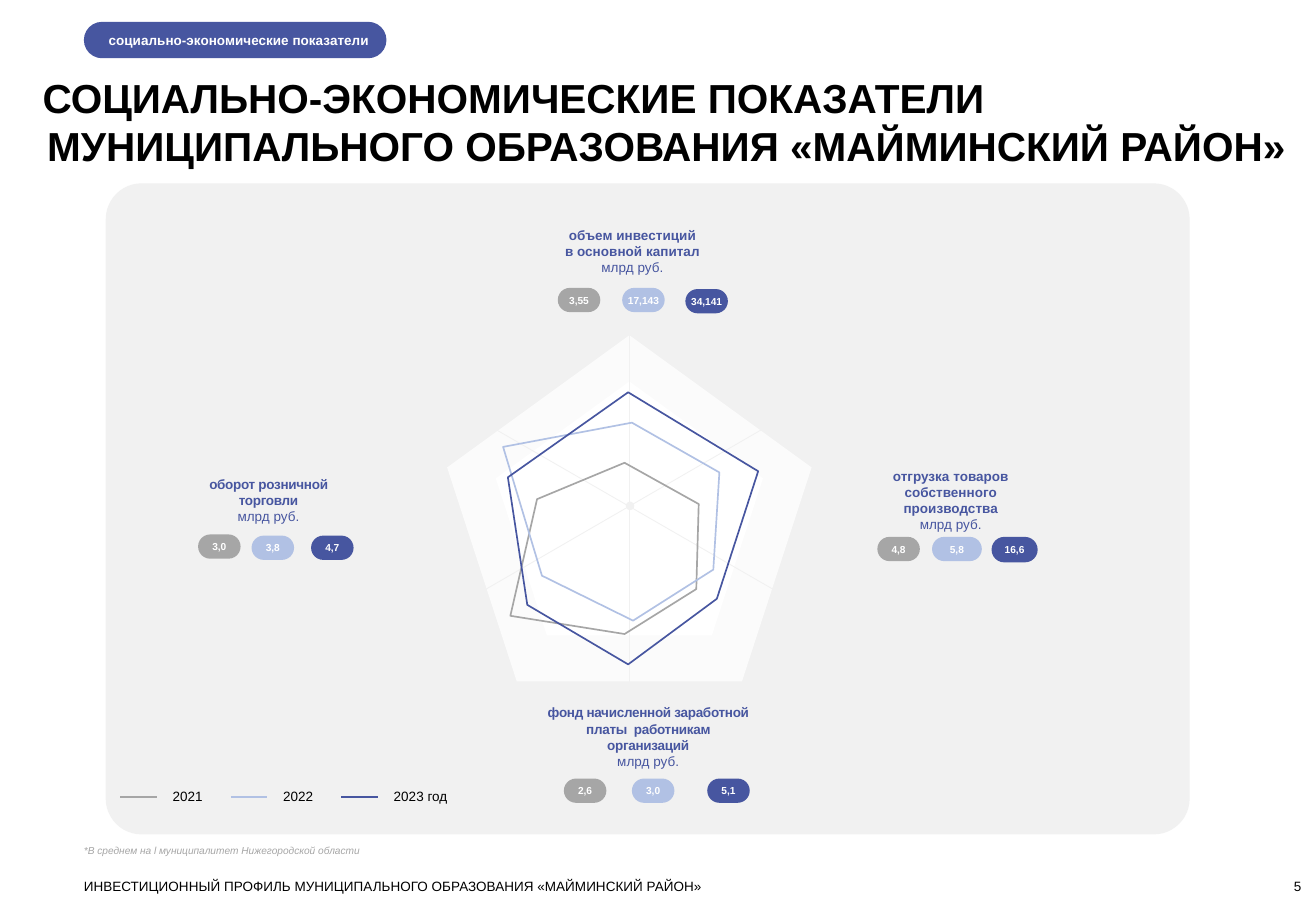
import pptx
import pptx.util
import pptx.dml.color
import pptx.enum.shapes
import pptx.enum.text
import pptx.oxml

PX = 9144  # 100 px to the inch
RGB = pptx.dml.color.RGBColor
BLACK, WHITE = RGB(0, 0, 0), RGB(255, 255, 255)
BLUE, LIGHT, GRAY = RGB(0x47, 0x56, 0xA0), RGB(0xB1, 0xC1, 0xE4), RGB(0xA6, 0xA6, 0xA6)
PANEL, PALE = RGB(0xF1, 0xF1, 0xF1), RGB(0xFB, 0xFB, 0xFB)
SHAPE = pptx.enum.shapes.MSO_SHAPE
ALIGN = pptx.enum.text.PP_ALIGN
ANCHOR = pptx.enum.text.MSO_ANCHOR
YEAR_COLORS = [GRAY, LIGHT, BLUE]

prs = pptx.Presentation()
prs.slide_width, prs.slide_height = 1083 * PX, 750 * PX
s = prs.slides.add_slide(prs.slide_layouts[5])


def write(sp, lines, size, color, aligns, anchor=ANCHOR.TOP, inset=0, spacing=0, **font):
    """Fill a shape with one paragraph per (text, bold) line."""
    tf = sp.text_frame
    frame = {"word_wrap": True, "auto_size": pptx.enum.text.MSO_AUTO_SIZE.NONE,
             "vertical_anchor": anchor, "margin_left": inset * PX,
             "margin_top": 0, "margin_right": 0, "margin_bottom": 0}
    for name, value in frame.items():
        setattr(tf, name, value)
    for i, (text, bold) in enumerate(lines):
        p = tf.paragraphs[0] if i == 0 else tf.add_paragraph()
        p.alignment = aligns[i % len(aligns)]
        r = p.add_run()
        r.text = text
        values = {"name": "Arial", "size": pptx.util.Pt(size), "bold": bold, **font}
        for name, value in values.items():
            setattr(r.font, name, value)
        r.font.color.rgb = color
        if spacing and bold:
            r._r.get_or_add_rPr().set("spc", str(spacing))


def add_filled(kind, box, color, adj=None):
    sp = s.shapes.add_shape(kind, *[v * PX for v in box])
    sp.shadow.inherit = False
    sp.fill.solid()
    sp.fill.fore_color.rgb = color
    sp.line.fill.background()
    if adj is not None:
        sp.adjustments[0] = adj
    return sp


# Title
title = s.shapes.title
title.left, title.top, title.width, title.height = [v * PX for v in (35, 60, 1027, 81)]
write(title, [("СОЦИАЛЬНО-ЭКОНОМИЧЕСКИЕ ПОКАЗАТЕЛИ", True),
              ("МУНИЦИПАЛЬНОГО ОБРАЗОВАНИЯ «МАЙМИНСКИЙ РАЙОН»", True)],
      24, BLACK, [ALIGN.LEFT, ALIGN.CENTER])

# Section tag
tag = add_filled(SHAPE.ROUNDED_RECTANGLE, (69, 18, 249, 30), BLUE, 0.5)
write(tag, [("социально-экономические показатели", True)], 8, WHITE,
      [ALIGN.LEFT], ANCHOR.MIDDLE, inset=16)

# Panel and pentagon backdrop
add_filled(SHAPE.ROUNDED_RECTANGLE, (87, 151, 892, 536), PANEL, 0.055)
add_filled(SHAPE.REGULAR_PENTAGON, (368, 276, 300, 285), PALE)
add_filled(SHAPE.REGULAR_PENTAGON, (408, 314, 220, 209), WHITE)

# Axes and legend lines
lines = [((518, 276, 518, 562), PANEL, 0.5),
         ((628, 353, 400, 485), PANEL, 0.5),
         ((407, 353, 636, 485), PANEL, 0.5)]
legend = [(99 + 91 * i, text) for i, text in enumerate(["2021", "2022", "2023 год"])]
lines += [((x, 656, x + 30, 656), color, 1) for (x, text), color in zip(legend, YEAR_COLORS)]
for ends, color, width in lines:
    c = s.shapes.add_connector(pptx.enum.shapes.MSO_CONNECTOR.STRAIGHT, *[v * PX for v in ends])
    c.line.color.rgb = color
    c.line.width = pptx.util.Pt(width)
    c._element.spPr.append(pptx.oxml.parse_xml(
        '<a:effectLst xmlns:a="http://schemas.openxmlformats.org/drawingml/2006/main"/>'))
add_filled(SHAPE.OVAL, (515, 413, 7, 7), PANEL)

# Radar outline for each year
outlines = [
    [(442, 411), (514, 381), (575, 415), (573, 485), (514, 522), (420, 507)],
    [(414, 368), (520, 348), (592, 389), (587, 469), (521, 511), (446, 474)],
    [(418, 393), (517, 323), (624, 388), (590, 493), (517, 547), (434, 498)],
]
for points, color in zip(outlines, YEAR_COLORS):
    fb = s.shapes.build_freeform(*points[0], scale=PX)
    fb.add_line_segments(points[1:], close=True)
    sp = fb.convert_to_shape()
    sp.shadow.inherit = False
    sp.fill.background()
    sp.line.color.rgb = color
    sp.line.width = pptx.util.Pt(1)

# Indicators: label box, label lines, letter spacing, a value and its pill for each year
indicators = [
    ((459, 187, 123, 40), ["объем инвестиций", "в основной капитал"], 0,
     [("3,55", (459, 237, 35, 20)), ("17,143", (512, 237, 35, 20)), ("34,141", (564, 238, 35, 20))]),
    ((721, 385, 123, 54), ["отгрузка товаров собственного производства"], 0,
     [("4,8", (722, 442, 35, 20)), ("5,8", (767, 442, 41, 20)), ("16,6", (816, 442, 38, 21))]),
    ((448, 580, 171, 54), ["фонд начисленной заработной платы  работникам организаций"], -20,
     [("2,6", (464, 641, 35, 20)), ("3,0", (520, 641, 35, 20)), ("5,1", (582, 641, 35, 20))]),
    ((167, 392, 108, 40), ["оборот розничной торговли"], -20,
     [("3,0", (163, 440, 35, 20)), ("3,8", (207, 441, 35, 20)), ("4,7", (256, 441, 35, 20))]),
]
for box, names, spacing, values in indicators:
    label = s.shapes.add_textbox(*[v * PX for v in box])
    write(label, [(name, True) for name in names] + [("млрд руб.", False)], 8, BLUE,
          [ALIGN.CENTER], spacing=spacing)
    for (value, pill_box), color in zip(values, YEAR_COLORS):
        pill = add_filled(SHAPE.ROUNDED_RECTANGLE, pill_box, color, 0.5)
        write(pill, [(value, True)], 6, WHITE, [ALIGN.CENTER], ANCHOR.MIDDLE)

# Legend labels, footnote, footer and page number
notes = [((x + 43, 649, 86 if "год" in text else 29, 13), text, 8, BLACK, ALIGN.LEFT, False)
         for x, text in legend]
notes += [
    ((69, 695, 468, 10), "*В среднем на l муниципалитет Нижегородской области",
     6, GRAY, ALIGN.LEFT, True),
    ((69, 723, 800, 13), "ИНВЕСТИЦИОННЫЙ ПРОФИЛЬ МУНИЦИПАЛЬНОГО ОБРАЗОВАНИЯ «МАЙМИНСКИЙ РАЙОН»",
     8, BLACK, ALIGN.LEFT, False),
    ((991, 723, 80, 13), "5", 8, BLACK, ALIGN.RIGHT, False),
]
for box, text, size, color, align, italic in notes:
    tb = s.shapes.add_textbox(*[v * PX for v in box])
    write(tb, [(text, False)], size, color, [align], italic=italic)

prs.save("out.pptx")
